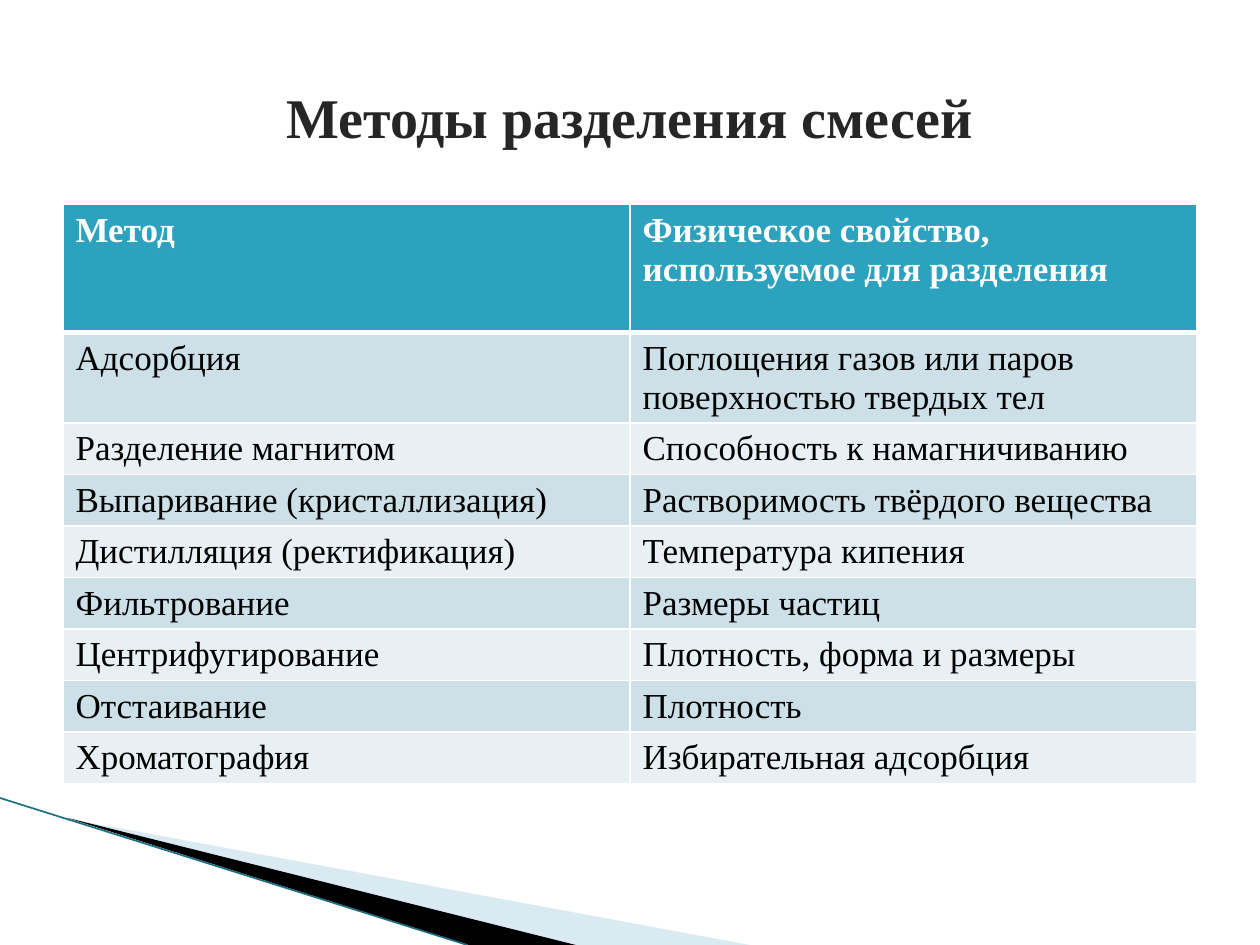
from pptx import Presentation
from pptx.util import Pt
from pptx.dml.color import RGBColor
from pptx.enum.shapes import MSO_CONNECTOR
from pptx.enum.text import MSO_ANCHOR, PP_ALIGN
from pptx.oxml.ns import qn
from lxml import etree

STRAIGHT = MSO_CONNECTOR.STRAIGHT
MIDDLE = MSO_ANCHOR.MIDDLE
CENTER = PP_ALIGN.CENTER

TITLE = "Методы разделения смесей"
ROWS = [
    ("Метод", "Физическое свойство, используемое для разделения"),
    ("Адсорбция", "Поглощения газов или паров поверхностью твердых тел"),
    ("Разделение магнитом", "Способность к намагничиванию"),
    ("Выпаривание (кристаллизация)", "Растворимость твёрдого вещества"),
    ("Дистилляция (ректификация)", "Температура кипения"),
    ("Фильтрование", "Размеры частиц"),
    ("Центрифугирование", "Плотность, форма и размеры"),
    ("Отстаивание", "Плотность"),
    ("Хроматография", "Избирательная адсорбция"),
]
THEME = {
    "font": "Times New Roman", "title_size": 32, "cell_size": 20,
    "title": "262626", "head": "2DA2BF", "bands": ("E8F0F4", "CDE0E8"),
    "white": "FFFFFF", "black": "000000",
    "pale": "A0CBDC", "edge": "1B6F82",
}
WEDGES = [
    ("pale", 40, [(39.6, 468), (428.4, 540), (328.3, 540)]),
    ("black", 100, [(38.2, 467.3), (329, 540), (267.8, 540)]),
]
EDGE = (0, 456, 267, 540)
LEFT, TOP, WIDTH = 36, 116.9, 648
TALL = [73.2, 51.2] + [29.45] * 7


def color(name):
    return RGBColor.from_string(THEME.get(name, name))


def write(frame, text, size, tint, bold):
    para = frame.paragraphs[0]
    run = para.add_run()
    run.text = text
    font = run.font
    font.name, font.size, font.bold = THEME["font"], Pt(THEME[size]), bold
    font.color.rgb = color(tint)
    return para


def add_wedge(slide, tint, alpha, points):
    first, *rest = [(Pt(x), Pt(y)) for x, y in points]
    pen = slide.shapes.build_freeform(*first)
    pen.add_line_segments(rest)
    shape = pen.convert_to_shape()
    shape.shadow.inherit = False
    shape.line.fill.background()
    shape.fill.solid()
    shape.fill.fore_color.rgb = color(tint)
    if alpha < 100:
        node = shape.fill._xPr.find(".//" + qn("a:srgbClr"))
        etree.SubElement(node, qn("a:alpha"), val=str(alpha * 1000))


def add_edge(slide):
    line = slide.shapes.add_connector(STRAIGHT, *map(Pt, EDGE))
    line.line.width = Pt(0.95)
    line.line.color.rgb = color("edge")
    etree.SubElement(line._element.spPr, qn("a:effectLst"))


def set_border(cell, widths):
    props = cell._tc.get_or_add_tcPr()
    for spot, (side, width) in enumerate(widths.items()):
        line = etree.Element(qn("a:ln" + side), w=str(Pt(width)))
        fill = etree.SubElement(line, qn("a:solidFill"))
        etree.SubElement(fill, qn("a:srgbClr"), val=THEME["white"])
        props.insert(spot, line)


def add_grid(slide):
    cols = len(ROWS[0])
    table = slide.shapes.add_table(
        len(ROWS), cols, Pt(LEFT), Pt(TOP), Pt(WIDTH), Pt(sum(TALL))).table
    for col in table.columns:
        col.width = Pt(WIDTH / cols)
    for r, (texts, tall) in enumerate(zip(ROWS, TALL)):
        table.rows[r].height = Pt(tall)
        head = r == 0
        for c, text in enumerate(texts):
            cell = table.cell(r, c)
            write(cell.text_frame, text, "cell_size",
                  "white" if head else "black", head)
            cell.fill.solid()
            cell.fill.fore_color.rgb = color(
                "head" if head else THEME["bands"][r % 2])
            set_border(cell, {"L": 1, "R": 1, "T": 3 if r == 1 else 1,
                              "B": 3 if head else 1})


def add_title(slide):
    box = slide.shapes.add_textbox(Pt(36), Pt(21.6), Pt(648), Pt(90))
    frame = box.text_frame
    frame.word_wrap = True
    frame.vertical_anchor = MIDDLE
    write(frame, TITLE, "title_size", "title", True).alignment = CENTER


def main():
    deck = Presentation()
    deck.slide_width, deck.slide_height = Pt(720), Pt(540)
    slide = deck.slides.add_slide(deck.slide_layouts[6])
    for wedge in WEDGES:
        add_wedge(slide, *wedge)
    add_edge(slide)
    add_grid(slide)
    add_title(slide)
    deck.save("out.pptx")


if __name__ == "__main__":
    main()
